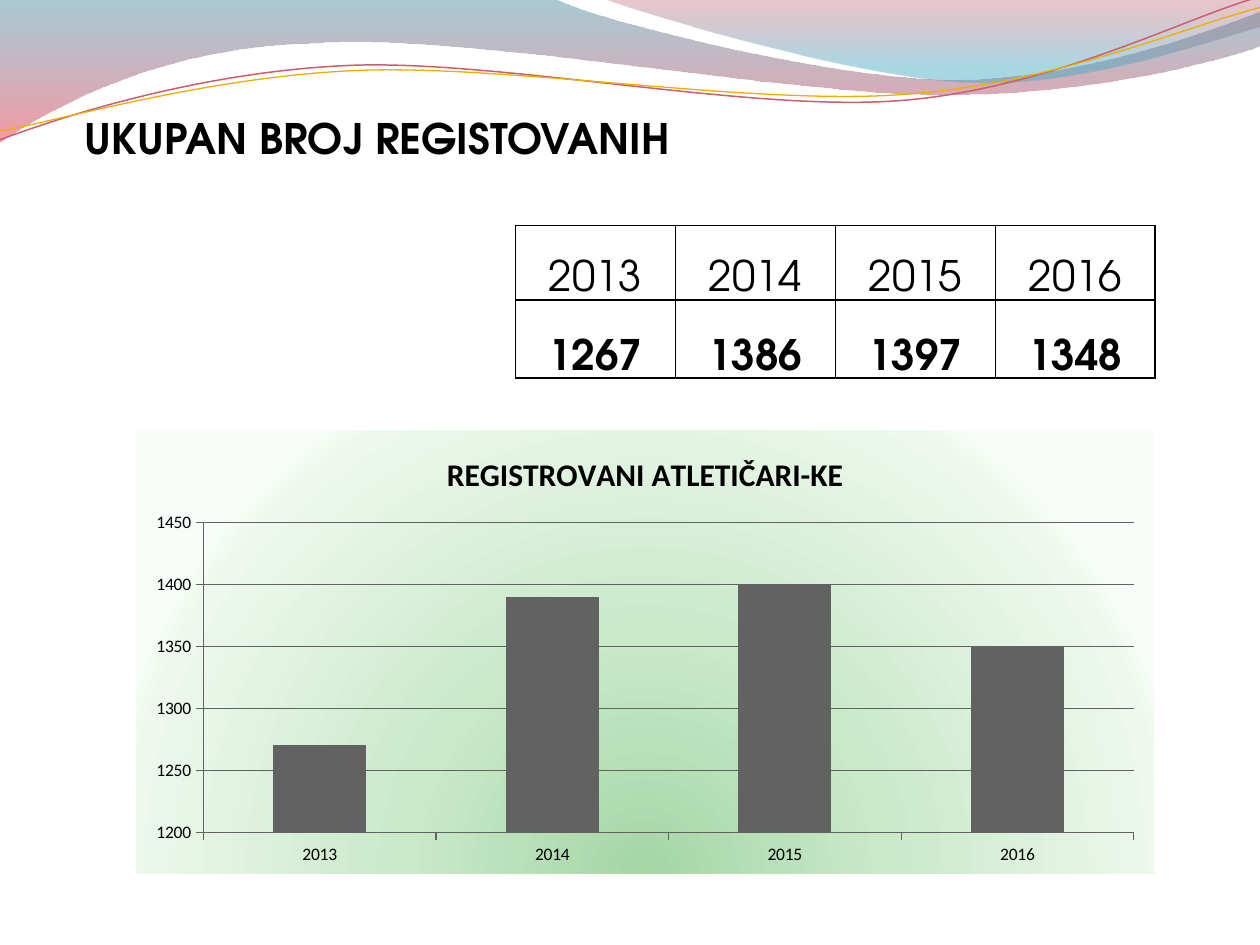
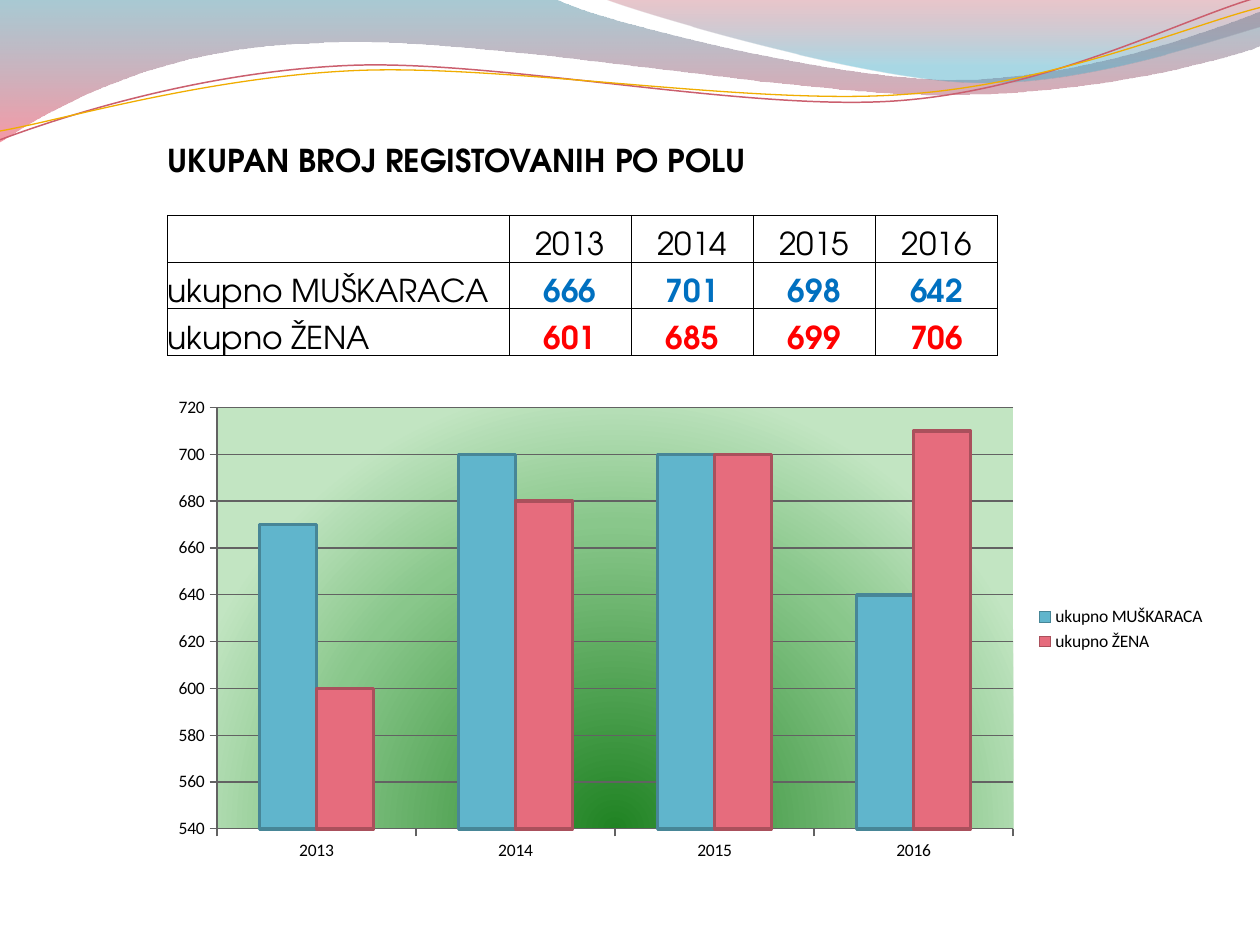
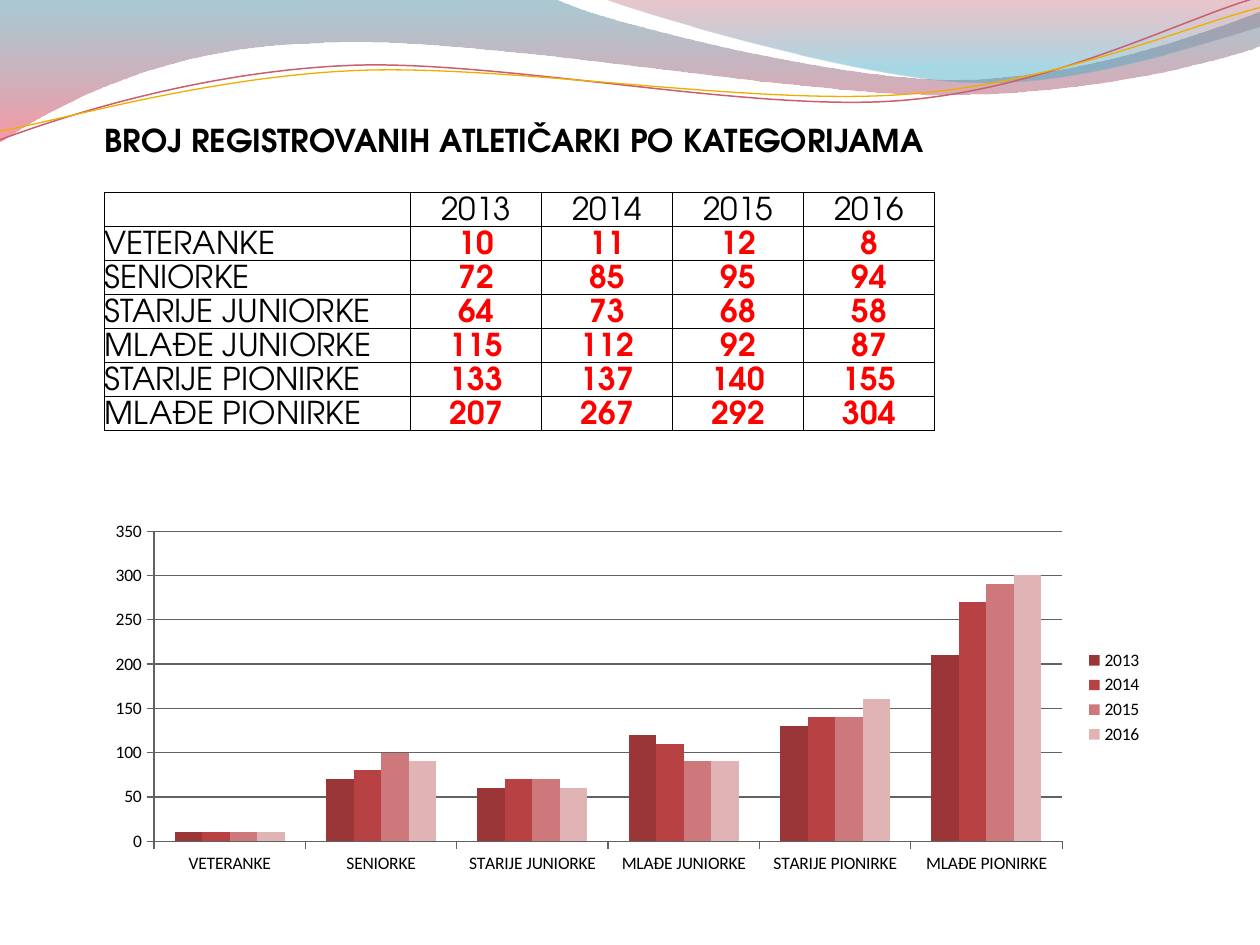
import pptx
import pptx.chart.data
import pptx.dml.color
import pptx.enum.chart
import pptx.enum.text
import pptx.oxml
import pptx.oxml.ns
import pptx.util
from pptx.util import Inches

BLACK, BLUE, RED, GREY = "000000", "0070C0", "FF0000", "626262"
YEARS = ["2013", "2014", "2015", "2016"]
BLANK_LAYOUT = 6
NEIGHBOURS = {"lnL": (0, -1), "lnR": (0, 1), "lnT": (-1, 0), "lnB": (1, 0)}

# Each wave: start point, then line points (2 numbers) or Bezier curves (6 numbers).
WAVE_FILLS = [
    ([(0, 0), (4.4, -0.01), (4.76, 0.17, 6.64, 0.63, 7.58, 0.63),
      (8.53, 0.63, 9.58, 0.26, 10, 0.09), (10.01, 0.36),
      (9.83, 0.44, 8.7, 0.76, 7.46, 0.75), (6.22, 0.75, 3.82, 0.28, 2.57, 0.34),
      (1.29, 0.36, 0.46, 0.83, -0.01, 1.13)],
     [(0, "3F8A9F", 45), (100, "EF445B", 55)]),
    ([(4.79, -0.01), (5.09, 0.11, 6.82, 0.62, 7.69, 0.65),
      (8.56, 0.69, 9.61, 0.32, 10, 0.21), (10, 0)],
     [(0, "B84253", 30), (80, "42ABC7", 45)]),
]
WAVE_LINES = [
    ([(0, 1.11), (0.48, 0.93, 1.58, 0.57, 2.77, 0.52),
      (3.95, 0.47, 5.93, 0.89, 7.13, 0.8), (8.33, 0.71, 9.38, 0.15, 9.98, -0.02)],
     "CB5F6E", 0.85),
    ([(0, 1.04), (0.47, 0.96, 1.64, 0.61, 2.83, 0.56),
      (4.03, 0.51, 5.97, 0.84, 7.17, 0.75), (8.36, 0.67, 9.41, 0.21, 10, 0.06)],
     "F0AD00", 0.75),
]


def color(hex_value):
    return pptx.dml.color.RGBColor.from_string(hex_value)


def xml(text):
    """Parse a fragment that uses the a: and c: prefixes."""
    head, rest = text.split(">", 1)
    return pptx.oxml.parse_xml(f"{head} {pptx.oxml.ns.nsdecls('a', 'c')}>{rest}")


def gradient(stops, direction):
    """Gradient fill from (percent, colour) or (percent, colour, opacity percent) stops."""
    marks = ""
    for pos, hex_value, *opacity in stops:
        alpha = f'<a:alpha val="{opacity[0] * 1000}"/>' if opacity else ""
        marks += (f'<a:gs pos="{pos * 1000}"><a:srgbClr val="{hex_value}">'
                  f'{alpha}</a:srgbClr></a:gs>')
    return f"<a:gradFill><a:gsLst>{marks}</a:gsLst>{direction}</a:gradFill>"


def glow(*stops):
    """Chart area properties with a round gradient centred below the area."""
    fill = gradient(
        stops,
        '<a:path path="circle"><a:fillToRect l="50000" t="130000" r="50000" b="-30000"/></a:path>')
    return xml(f"<c:spPr>{fill}<a:ln><a:noFill/></a:ln></c:spPr>")


class Report:
    text_font = "TeX Gyre Adventor"
    chart_font = "Calibri"

    def __init__(self):
        self.deck = pptx.Presentation()
        self.deck.slide_width, self.deck.slide_height = Inches(10), Inches(7.5)
        self.layout = self.deck.slide_layouts[BLANK_LAYOUT]
        for placeholder in list(self.layout.placeholders):
            placeholder.element.getparent().remove(placeholder.element)
        self.slide = None

    def add_slide(self):
        self.slide = self.deck.slides.add_slide(self.layout)
        if len(self.deck.slides) == 1:
            self.waves()

    def waves(self):
        """Draw the waves once and move them to the shared layout."""
        shapes = []
        for steps, stops in WAVE_FILLS:
            wave = self.wave(steps, closed=True)
            wave.line.fill.background()
            properties = wave.element.spPr
            empty_fill = properties.find(pptx.oxml.ns.qn("a:noFill"))
            properties.replace(
                empty_fill, xml(gradient(stops, '<a:lin ang="5400000" scaled="0"/>')))
            shapes.append(wave)
        for steps, hex_value, width in WAVE_LINES:
            wave = self.wave(steps, closed=False)
            wave.line.color.rgb = color(hex_value)
            wave.line.width = pptx.util.Pt(width)
            shapes.append(wave)
        for wave in shapes:
            self.layout.shapes.element.append(wave.element)

    def wave(self, steps, closed):
        """Freeform through the end points, with its curved segments bent."""
        ends = [(Inches(step[-2]), Inches(step[-1])) for step in steps]
        builder = self.slide.shapes.build_freeform(*ends[0])
        builder.add_line_segments(ends[1:], close=closed)
        shape = builder.convert_to_shape()
        shape.shadow.inherit = False
        shape.fill.background()
        segments = list(shape.element.iter(pptx.oxml.ns.qn("a:lnTo")))
        for segment, step in zip(segments, steps[1:]):
            if len(step) == 6:
                points = "".join(
                    f'<a:pt x="{Inches(x) - shape.left}" y="{Inches(y) - shape.top}"/>'
                    for x, y in zip(step[::2], step[1::2]))
                segment.getparent().replace(
                    segment, xml(f"<a:cubicBezTo>{points}</a:cubicBezTo>"))
        return shape

    def cell_text(self, cell, text, size, hex_value=BLACK, bold=False, centred=True):
        cell.text = text
        para = cell.text_frame.paragraphs[0]
        if centred:
            para.alignment = pptx.enum.text.PP_ALIGN.CENTER
        para.font.name = self.text_font
        para.font.size = pptx.util.Pt(size)
        para.font.bold = bold
        para.font.color.rgb = color(hex_value)

    def table(self, left, top, widths, heights, title, title_span, rows,
              size, border, labels=None):
        """Title row, spacer row, then a ruled grid of years and (colour, values) rows."""
        count = len(heights), len(widths)
        frame = self.slide.shapes.add_table(
            *count, Inches(left), Inches(top), Inches(sum(widths)), Inches(sum(heights)))
        table = frame.table
        table.first_row = table.horz_banding = False
        for column, width in zip(table.columns, widths):
            column.width = Inches(width)
        for row, height in zip(table.rows, heights):
            row.height = Inches(height)

        first = 0 if labels else 1

        def in_grid(row, column):
            return 2 <= row < count[0] and first <= column < count[1]

        for r in range(count[0]):
            for c in range(count[1]):
                cell = table.cell(r, c)
                self.cell_text(cell, "", size)
                cell.fill.background()
                cell.vertical_anchor = pptx.enum.text.MSO_ANCHOR.BOTTOM
                cell.margin_left = cell.margin_right = 0
                cell.margin_top = cell.margin_bottom = 0
                properties = cell._tc.get_or_add_tcPr()
                for place, (side, (down, across)) in enumerate(NEIGHBOURS.items()):
                    ruled = in_grid(r, c) or in_grid(r + down, c + across)
                    fill = (f'<a:solidFill><a:srgbClr val="{BLACK}"/></a:solidFill>'
                            if ruled else "<a:noFill/>")
                    properties.insert(
                        place, xml(f'<a:{side} w="{pptx.util.Pt(border)}">{fill}</a:{side}>'))

        table.cell(0, 0).merge(table.cell(0, title_span - 1))
        self.cell_text(table.cell(0, 0), title, size, bold=True, centred=False)
        for c, year in enumerate(YEARS, 1):
            self.cell_text(table.cell(2, c), year, size)
        for r, (hex_value, values) in enumerate(rows, 3):
            if labels:
                self.cell_text(table.cell(r, 0), labels[r - 3], size, centred=False)
            for c, value in enumerate(values, 1):
                self.cell_text(table.cell(r, c), str(value), size, hex_value, bold=True)

    def chart(self, left, top, width, height, categories, series, scale,
              title=None, edges=None):
        """Column chart, rounded to tens; series holds (name, values, colour)."""
        data = pptx.chart.data.CategoryChartData()
        data.categories = categories
        for name, values, _ in series:
            data.add_series(name, [round(value, -1) for value in values])
        chart = self.slide.shapes.add_chart(
            pptx.enum.chart.XL_CHART_TYPE.COLUMN_CLUSTERED,
            Inches(left), Inches(top), Inches(width), Inches(height), data).chart
        chart.font.name = self.chart_font
        chart.font.size = pptx.util.Pt(10)
        chart.font.color.rgb = color(BLACK)

        chart.has_title = title is not None
        if title:
            para = chart.chart_title.text_frame.paragraphs[0]
            para.text = title
            para.font.name = self.chart_font
            para.font.size = pptx.util.Pt(18)
            para.font.bold = True
            para.font.color.rgb = color(BLACK)
        chart.has_legend = len(series) > 1
        if chart.has_legend:
            chart.legend.position = pptx.enum.chart.XL_LEGEND_POSITION.RIGHT
            chart.legend.include_in_layout = False

        plot = chart.plots[0]
        plot.gap_width, plot.overlap, plot.vary_by_categories = 150, 0, False
        for index, (bars, (_, _, hex_value)) in enumerate(zip(plot.series, series)):
            bars.invert_if_negative = False
            bars.format.fill.solid()
            bars.format.fill.fore_color.rgb = color(hex_value)
            if edges:
                bars.format.line.color.rgb = color(edges[index])
                bars.format.line.width = pptx.util.Pt(2)

        values_axis = chart.value_axis
        values_axis.minimum_scale, values_axis.maximum_scale, values_axis.major_unit = scale
        values_axis.has_major_gridlines = True
        for part in (values_axis, values_axis.major_gridlines, chart.category_axis):
            part.format.line.color.rgb = color(GREY)
            part.format.line.width = pptx.util.Pt(0.75)
        return chart


def total_slide(report):
    totals = [1267, 1386, 1397, 1348]
    report.add_slide()
    report.table(0.67, 0.67, [3.42] + [1.27] * 4, [0.62, 0.5, 0.59, 0.62],
                 "UKUPAN BROJ REGISTOVANIH", 3, [(BLACK, totals)], size=24, border=1)
    chart = report.chart(1.08, 3.42, 8.08, 3.51, YEARS, [("Series 1", totals, GREY)],
                         (1200, 1450, 50), title="REGISTROVANI ATLETIČARI-KE")
    chart.element.chart.addnext(
        glow((0, "A5D6A6"), (43, "C9E9C9"), (93, "EEF8EE"), (100, "F9FDF9")))


def gender_slide(report):
    labels = ["ukupno MUŠKARACA", "ukupno ŽENA"]
    men, women = [666, 701, 698, 642], [601, 685, 699, 706]
    report.add_slide()
    report.table(1.33, 1.08, [2.71] + [0.97] * 4, [0.34, 0.29] + [0.37] * 3,
                 "UKUPAN BROJ REGISTOVANIH PO POLU", 3, [(BLUE, men), (RED, women)],
                 size=18, border=0.5, labels=labels)
    series = list(zip(labels, [men, women], ["60B5CC", "E66C7D"]))
    chart = report.chart(1.25, 3.08, 8.42, 3.83, YEARS, series, (540, 720, 20),
                         edges=["478697", "AA505C"])
    chart.element.chart.plotArea.append(
        glow((0, "208323"), (68, "89C78B"), (100, "C2E5C2")))


def category_slide(report):
    counts = {
        "VETERANKE": [10, 11, 12, 8],
        "SENIORKE": [72, 85, 95, 94],
        "STARIJE JUNIORKE": [64, 73, 68, 58],
        "MLAĐE JUNIORKE": [115, 112, 92, 87],
        "STARIJE PIONIRKE": [133, 137, 140, 155],
        "MLAĐE PIONIRKE": [207, 267, 292, 304],
    }
    report.add_slide()
    report.table(0.83, 0.99, [2.43] + [1.04] * 4, [0.27] * 9,
                 "BROJ REGISTROVANIH ATLETIČARKI PO KATEGORIJAMA", 5,
                 [(RED, values) for values in counts.values()],
                 size=18, border=0.5, labels=list(counts))
    shades = ["9B3638", "B84143", "CD787A", "E0B3B5"]
    series = list(zip(YEARS, zip(*counts.values()), shades))
    report.chart(0.75, 4.08, 8.42, 2.91, list(counts), series, (0, 350, 50))


def main():
    report = Report()
    total_slide(report)
    gender_slide(report)
    category_slide(report)
    report.deck.save("out.pptx")


if __name__ == "__main__":
    main()
